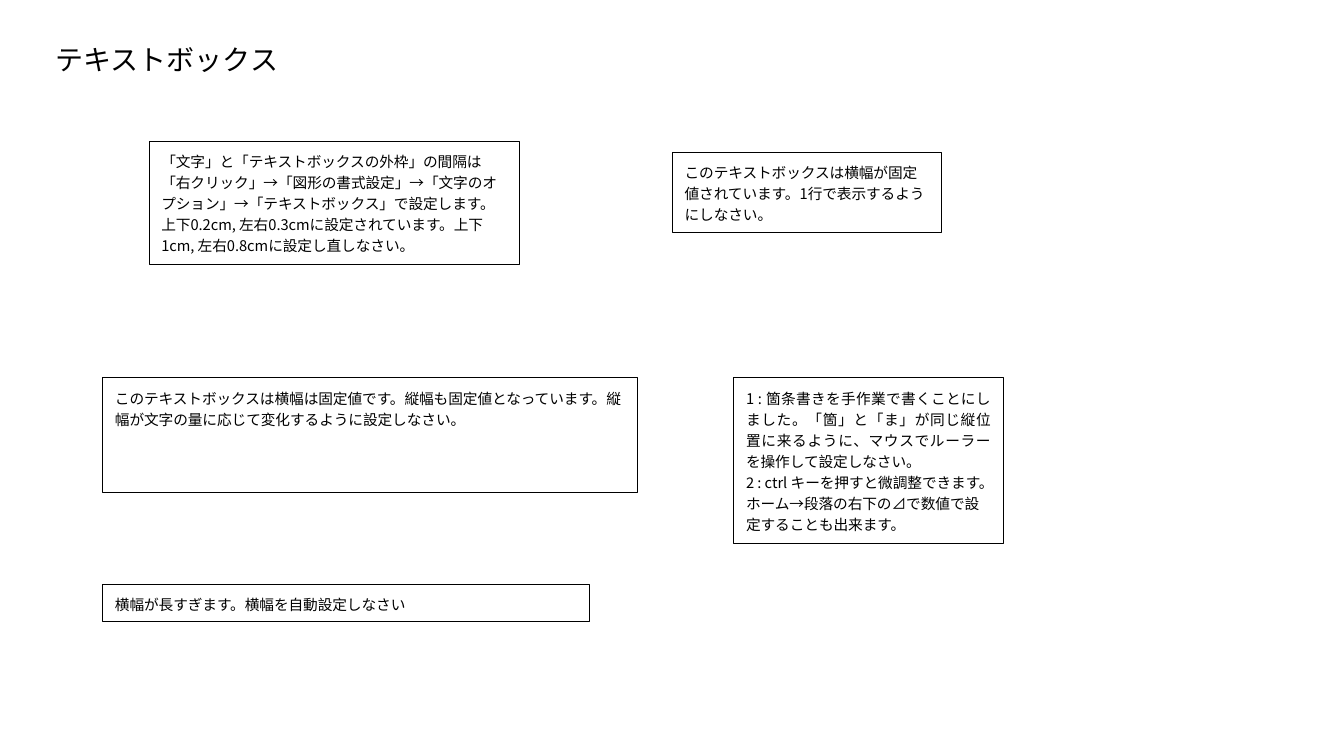
import pptx
import pptx.util
import pptx.dml.color
import pptx.enum.text
import pptx.oxml
import pptx.oxml.ns
from pptx.util import Inches

FONT = "Noto Sans CJK JP"
BLACK = "000000"

EXERCISES = [
    ((1.48, 1.4, 3.67, 1.22), True, [
        "「文字」と「テキストボックスの外枠」の間隔は「右クリック」→「図形の書式設定」→「文字のオプション」→「テキストボックス」で設定します。上下0.2cm, 左右0.3cmに設定されています。上下1cm, 左右0.8cmに設定し直しなさい。"]),
    ((1.02, 3.75, 5.3, 1.14), False, [
        "このテキストボックスは横幅は固定値です。縦幅も固定値となっています。縦幅が文字の量に応じて変化するように設定しなさい。"]),
    ((6.67, 1.51, 2.67, 0.8), True, [
        "このテキストボックスは横幅が固定値されています。1行で表示するようにしなさい。"]),
    ((7.28, 3.75, 2.67, 1.64), True, [
        "1 : 箇条書きを手作業で書くことにしました。「箇」と「ま」が同じ縦位置に来るように、マウスでルーラーを操作して設定しなさい。",
        "2 : ctrl キーを押すと微調整できます。ホーム→段落の右下の⊿で数値で設定することも出来ます。"]),
    ((1.02, 5.8, 4.83, 0.37), True, [
        "横幅が長すぎます。横幅を自動設定しなさい"]),
]


def color(value):
    return pptx.dml.color.RGBColor.from_string(value)


def style_paragraph(para, size, spacing):
    para.line_spacing = spacing
    para.font.size = pptx.util.Pt(size)
    para.font.color.rgb = color(BLACK)
    para.font.name = FONT
    properties = para._p.get_or_add_pPr().find(pptx.oxml.ns.qn("a:defRPr"))
    east_asian = pptx.oxml.parse_xml(
        f'<a:ea {pptx.oxml.ns.nsdecls("a")} typeface="{FONT}"/>')
    properties.find(pptx.oxml.ns.qn("a:latin")).addnext(east_asian)


def place_title(page, box, text):
    title = page.shapes.title
    title.left, title.top, title.width, title.height = map(Inches, box)
    frame = title.text_frame
    frame.text = text
    frame.word_wrap = False
    frame.auto_size = pptx.enum.text.MSO_AUTO_SIZE.NONE
    frame.vertical_anchor = pptx.enum.text.MSO_ANCHOR.MIDDLE
    para = frame.paragraphs[0]
    para.alignment = pptx.enum.text.PP_ALIGN.LEFT
    style_paragraph(para, 20, 0.9)


def place_exercise(page, box, grows, texts):
    exercise = page.shapes.add_textbox(*map(Inches, box))
    exercise.line.color.rgb = color(BLACK)
    exercise.line.width = pptx.util.Pt(0.75)
    frame = exercise.text_frame
    frame.word_wrap = True
    sizing = pptx.enum.text.MSO_AUTO_SIZE
    frame.auto_size = sizing.SHAPE_TO_FIT_TEXT if grows else sizing.NONE
    frame.margin_left = frame.margin_right = Inches(0.12)
    frame.margin_top = frame.margin_bottom = Inches(0.08)
    frame.text = "\n".join(texts)
    for para in frame.paragraphs:
        style_paragraph(para, 10.5, 1.2)
    if len(texts) > 1:
        frame.paragraphs[0].alignment = pptx.enum.text.PP_ALIGN.JUSTIFY


def main():
    deck = pptx.Presentation()
    deck.slide_width = Inches(13.33)
    deck.slide_height = Inches(7.5)
    page = deck.slides.add_slide(deck.slide_layouts[5])
    place_title(page, (0.45, 0.38, 2.86, 0.45), "テキストボックス")
    for box, grows, texts in EXERCISES:
        place_exercise(page, box, grows, texts)
    deck.save("out.pptx")


if __name__ == "__main__":
    main()
